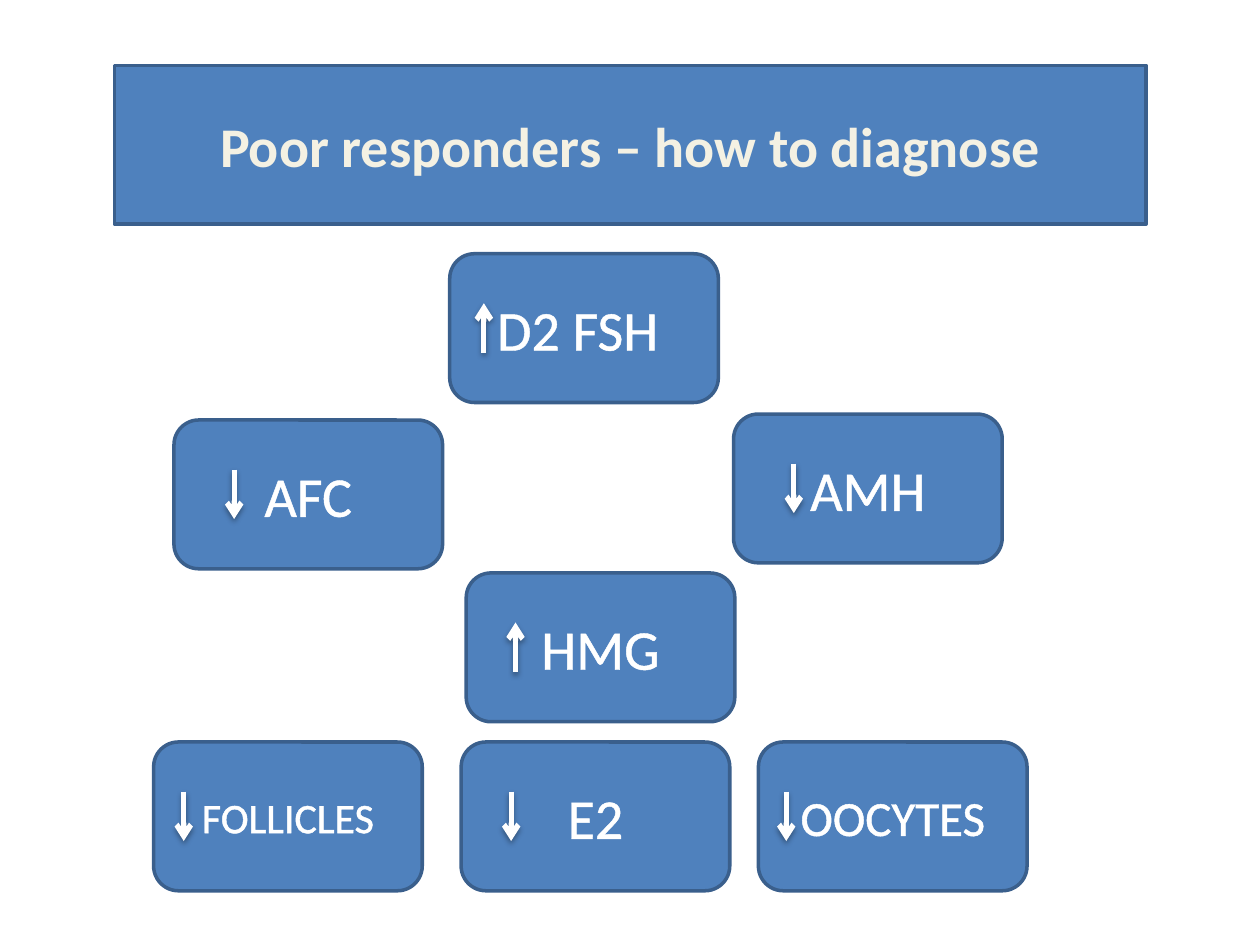
from lxml.etree import SubElement
from pptx import Presentation
from pptx.dml.color import RGBColor
from pptx.enum.shapes import MSO_CONNECTOR, MSO_SHAPE
from pptx.enum.text import MSO_ANCHOR, MSO_AUTO_SIZE, PP_ALIGN
from pptx.oxml import parse_xml
from pptx.oxml.ns import nsdecls, qn
from pptx.util import Pt

BLUE = RGBColor(0x4F, 0x81, 0xBD)
EDGE = RGBColor(0x3A, 0x5F, 0x8C)
CREAM = RGBColor(0xF4, 0xF1, 0xE3)
TITLE_EDGE = RGBColor(0x05, 0x46, 0x97)
WHITE = RGBColor(0xFF, 0xFF, 0xFF)

CARD_WIDTH, CARD_HEIGHT = 153.5, 85
ARROW_TOP, ARROW_LENGTH = 28.3, 28.3

# Cards: text, size, left, top, arrow offset, arrow direction
TREATMENT_CARDS = [
    ("FOLLICLES", 24, 87.8, 424, 17.2, "down"),
    ("E2", 32, 263.5, 424, 28.6, "down"),
    ("HMG", 32, 266.4, 327.4, 28.2, "up"),
    ("OOCYTES", 28, 433.4, 424, 15.9, "down"),
]
BASELINE_CARDS = [
    ("D2 FSH ", 32, 257, 145, 19.5, "up"),
    ("AFC", 32, 99.4, 240, 34.4, "down"),
    ("AMH", 32, 419.2, 236.6, 34.4, "down"),
]


def style_box(box):
    box.fill.solid()
    box.fill.fore_color.rgb = BLUE
    box.line.color.rgb = EDGE
    box.line.width = Pt(2)


def write_text(box, text, size, color, outline, outline_width, bold=False):
    frame = box.text_frame
    frame.word_wrap = True
    frame.auto_size = MSO_AUTO_SIZE.NONE
    frame.vertical_anchor = MSO_ANCHOR.MIDDLE
    para = frame.paragraphs[0]
    para.alignment = PP_ALIGN.CENTER
    para.font.name = "Calibri"
    para.font.size = Pt(size)
    para.font.bold = bold
    para.font.color.rgb = color
    span = para.add_run()
    span.text = text
    # Letter outline
    span.font._element.insert(0, parse_xml(
        f'<a:ln {nsdecls("a")} w="{Pt(outline_width)}"><a:solidFill>'
        f'<a:srgbClr val="{outline}"/></a:solidFill></a:ln>'))


def add_title(page, left, top, width, height):
    title = page.shapes.title
    title.left, title.top = Pt(left), Pt(top)
    title.width, title.height = Pt(width), Pt(height)
    style_box(title)
    write_text(title, "Poor responders – how to diagnose", 32, CREAM,
               TITLE_EDGE, 1, bold=True)


def add_arrow(group, x, top, direction):
    start, end = top, top + ARROW_LENGTH
    if direction == "up":
        start, end = end, start
    arrow = group.shapes.add_connector(
        MSO_CONNECTOR.STRAIGHT, Pt(x), Pt(start), Pt(x), Pt(end))
    arrow.line.color.rgb = WHITE
    arrow.line.width = Pt(3)
    SubElement(arrow.line._get_or_add_ln(), qn("a:tailEnd"), type="arrow")
    # Soft shadow below the arrow
    arrow._element.spPr.append(parse_xml(
        f'<a:effectLst {nsdecls("a")}><a:outerShdw blurRad="{Pt(3.1)}" '
        f'dist="{Pt(1.8)}" dir="5400000" rotWithShape="0">'
        '<a:srgbClr val="000000"><a:alpha val="35000"/></a:srgbClr>'
        '</a:outerShdw></a:effectLst>'))


def add_card(group, text, size, left, top, arrow_offset, direction):
    card = group.shapes.add_shape(
        MSO_SHAPE.ROUNDED_RECTANGLE, Pt(left), Pt(top),
        Pt(CARD_WIDTH), Pt(CARD_HEIGHT))
    card.shadow.inherit = False
    style_box(card)
    write_text(card, text, size, WHITE, WHITE, 1.45)
    add_arrow(group, left + arrow_offset, top + ARROW_TOP, direction)


def add_card_group(page, cards):
    group = page.shapes.add_group_shape()
    for card in cards:
        add_card(group, *card)


def main():
    deck = Presentation()
    deck.slide_width, deck.slide_height = Pt(720), Pt(540)
    page = deck.slides.add_slide(deck.slide_layouts[5])
    add_title(page, 65.3, 37.4, 589.7, 90.7)
    add_card_group(page, TREATMENT_CARDS)
    add_card_group(page, BASELINE_CARDS)
    deck.save("out.pptx")


if __name__ == "__main__":
    main()
